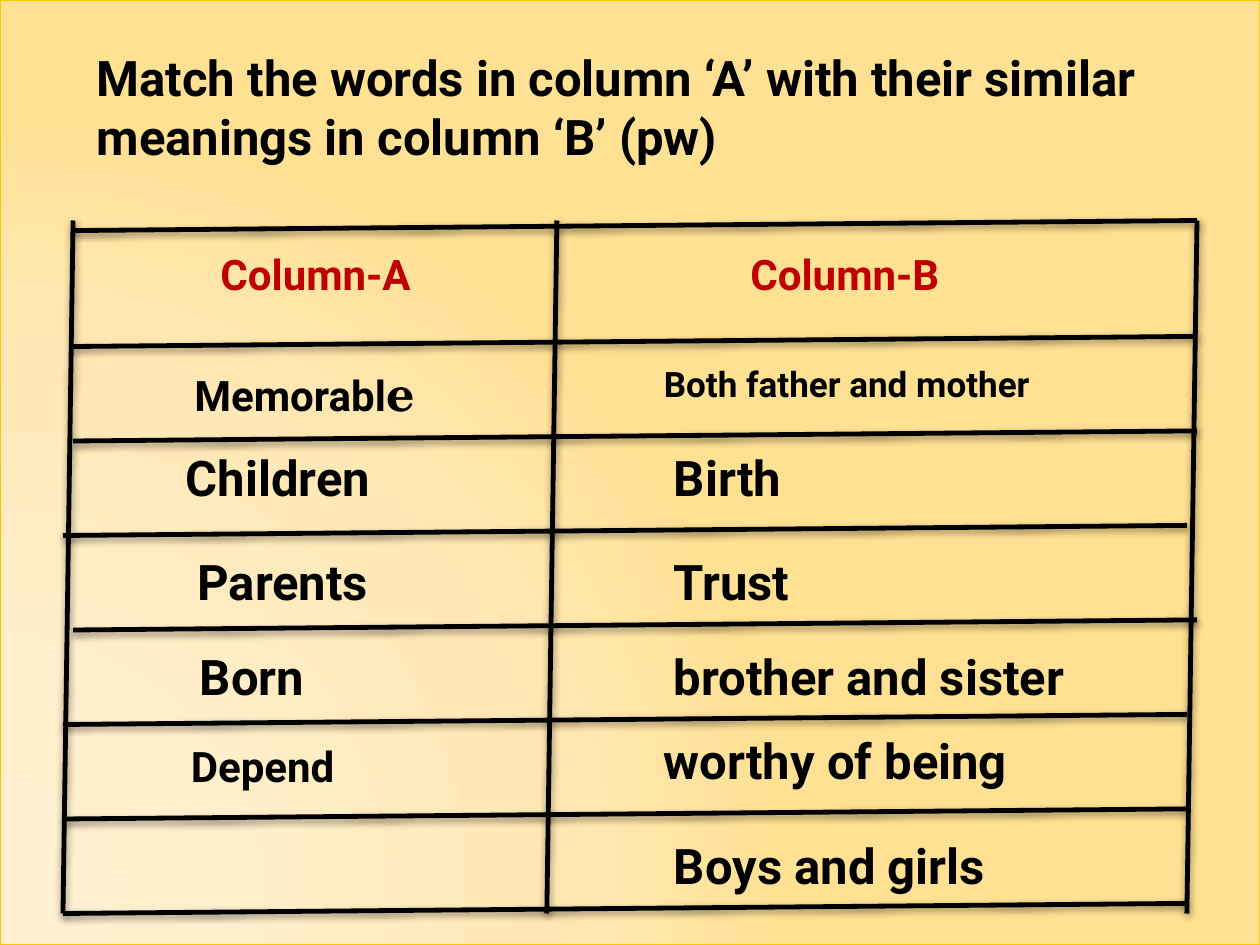
import pptx
import pptx.dml.color
import pptx.enum.shapes
import pptx.enum.text
import pptx.oxml
import pptx.oxml.ns
import pptx.util
from pptx.util import Inches

BLACK, RED = "000000", "C00000"
LEFT = pptx.enum.text.PP_ALIGN.LEFT
CENTER = pptx.enum.text.PP_ALIGN.CENTER
NS = pptx.oxml.ns.nsdecls("a")


def rgb(color):
    return pptx.dml.color.RGBColor.from_string(color)


def add_text(box, runs, align=LEFT, color=BLACK):
    """Add a bold text box; runs holds (text, size, font name) tuples."""
    tb = s.shapes.add_textbox(*map(Inches, box))
    tf = tb.text_frame
    tf.word_wrap = True
    tf.auto_size = pptx.enum.text.MSO_AUTO_SIZE.SHAPE_TO_FIT_TEXT
    p = tf.paragraphs[0]
    p.alignment = align
    for text, size, name in runs:
        r = p.add_run()
        r.text = text
        fmt = {"name": name, "size": pptx.util.Pt(size), "bold": True}
        for key, value in fmt.items():
            setattr(r.font, key, value)
        r.font.color.rgb = rgb(color)


prs = pptx.Presentation()
prs.slide_width, prs.slide_height = Inches(10), Inches(7.5)
s = prs.slides.add_slide(prs.slide_layouts[6])

# Background with a glow from the lower left
sp = s.shapes.add_shape(pptx.enum.shapes.MSO_SHAPE.RECTANGLE,
                        0, 0, prs.slide_width, prs.slide_height)
sp.shadow.inherit = False
sp.line.color.rgb = rgb("F8C700")
sp.line.width = pptx.util.Pt(1)
sp.fill.background()
stops = "".join(
    f'<a:gs pos="{pos * 1000}"><a:srgbClr val="{color}"/></a:gs>'
    for pos, color in [(0, "FFF0D1"), (30, "FFEFCC"), (75, "FFE7B1"), (100, "FFE193")])
gradient = pptx.oxml.parse_xml(
    f'<a:gradFill {NS} rotWithShape="1"><a:gsLst>{stops}</a:gsLst><a:path path="circle">'
    '<a:fillToRect l="5000" t="100000" r="120000" b="10000"/></a:path></a:gradFill>')
no_fill = sp._element.spPr.find(pptx.oxml.ns.qn("a:noFill"))
no_fill.getparent().replace(no_fill, gradient)

add_text((0.67, 0.33, 9.33, 1.04),
         [("Match the words in column ‘A’ with their similar meanings in column ‘B’ (pw)",
           28, "Roboto")])

# Hand-drawn grid: every row line rises, every column line leans left
SLANT, ROW_LENGTH, TOP, BOTTOM = 0.08, 8.92, 1.75, 7.25
row_starts = [(0.58, 1.83), (0.58, 2.75), (0.58, 3.5), (0.5, 4.25),
              (0.58, 5), (0.5, 5.75), (0.5, 6.5), (0.5, 7.25)]
grid = [(x, y, x + ROW_LENGTH, y - SLANT) for x, y in row_starts]
grid += [(x, TOP, x - SLANT, BOTTOM) for x in (0.58, 4.42, 9.5)]
for ends in grid:
    line = s.shapes.add_connector(pptx.enum.shapes.MSO_CONNECTOR.STRAIGHT,
                                  *map(Inches, ends))
    line.line.color.rgb = rgb(BLACK)
    line.line.width = pptx.util.Pt(2.75)
    line._element.spPr.append(pptx.oxml.parse_xml(
        f'<a:effectLst {NS}><a:outerShdw blurRad="50800" dist="20320" dir="5400000" '
        'rotWithShape="0"><a:srgbClr val="000000"><a:alpha val="42000"/></a:srgbClr>'
        '</a:outerShdw></a:effectLst>'))

add_text((0.92, 1.92, 3.17, 0.5), [("Column-A", 24, "Roboto")], CENTER, RED)
add_text((4.58, 1.92, 4.25, 0.5), [("Column-B", 24, "Roboto")], CENTER, RED)

add_text((0.83, 2.83, 3.17, 0.57),
         [("Memorabl", 24, "Roboto"), ("e", 28, "TeX Gyre Schola")], CENTER)
column_a = [
    ("Children", 28, (0.83, 3.5, 2.75, 0.57)),
    ("Parents", 28, (0.83, 4.33, 2.83, 0.57)),
    ("Born", 28, (0.5, 5.08, 3, 0.57)),
    ("Depend", 24, (0.5, 5.83, 3.17, 0.5)),
]
column_b = [
    ("Both father and mother", 20, (5.17, 2.83, 3.67, 0.44)),
    ("Birth", 28, (5.25, 3.5, 2.75, 0.57)),
    ("Trust", 28, (5.25, 4.33, 3.67, 0.57)),
    ("brother and sister", 28, (5.25, 5.08, 3.75, 0.57)),
    ("worthy of being", 28, (5.17, 5.75, 4, 0.57)),
    ("Boys and girls", 28, (5.25, 6.58, 3.75, 0.57)),
]
for words, align in [(column_a, CENTER), (column_b, LEFT)]:
    for text, size, box in words:
        add_text(box, [(text, size, "Roboto")], align)

prs.save("out.pptx")
